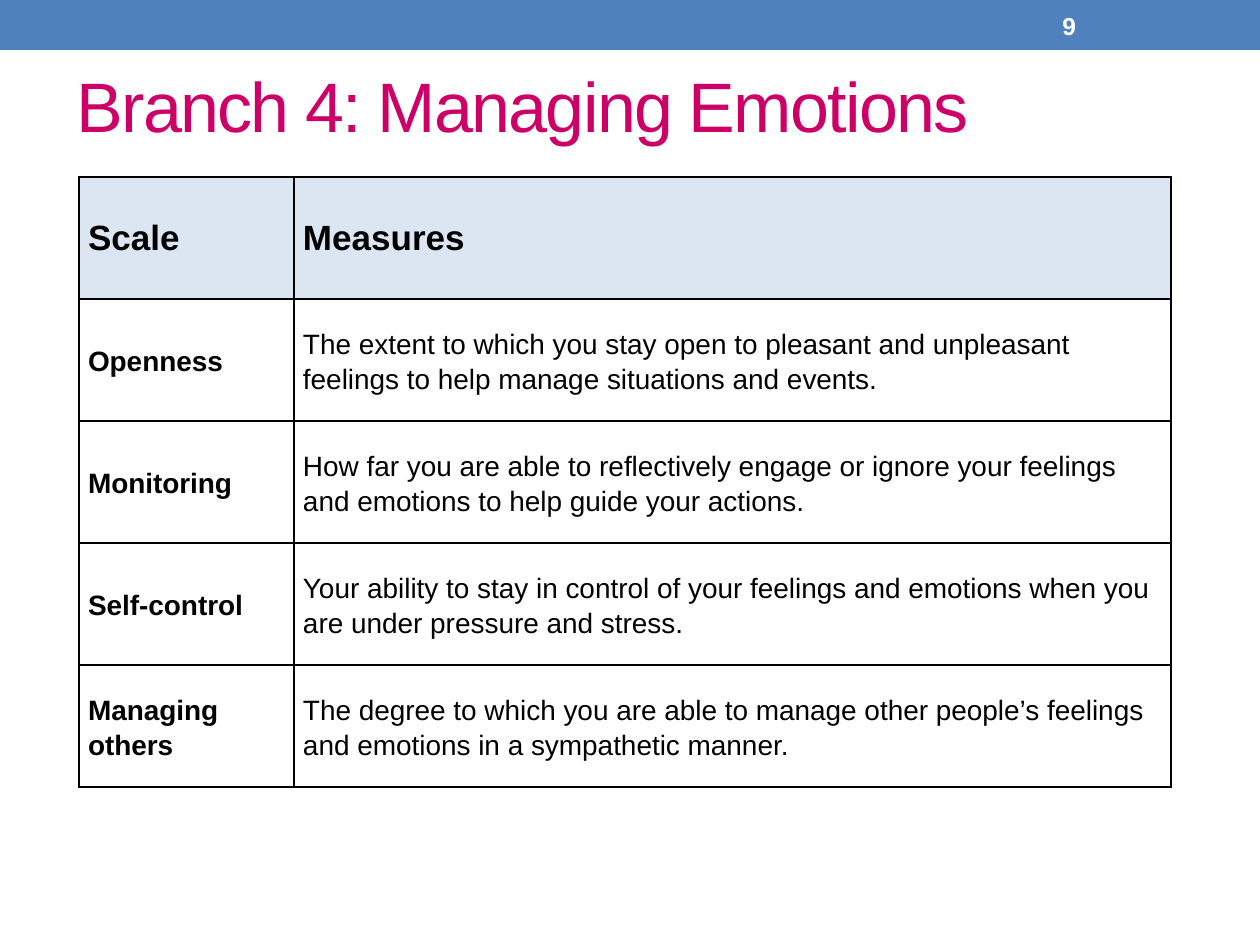
from lxml import etree
from pptx import Presentation
from pptx.dml.color import RGBColor
from pptx.enum.shapes import MSO_SHAPE
from pptx.enum.text import MSO_ANCHOR, PP_ALIGN
from pptx.oxml.ns import qn
from pptx.util import Pt

MIDDLE = MSO_ANCHOR.MIDDLE
LEFT = PP_ALIGN.LEFT
RECT = MSO_SHAPE.RECTANGLE

# Content
TITLE = "Branch 4: Managing Emotions"
NUMBER = "9"
ROWS = [
    ("Scale", "Measures"),
    ("Openness", "The extent to which you stay open to pleasant and unpleasant "
                 "feelings to help manage situations and events."),
    ("Monitoring", "How far you are able to reflectively engage or ignore your "
                   "feelings and emotions to help guide your actions."),
    ("Self-control", "Your ability to stay in control of your feelings and "
                     "emotions when you are under pressure and stress."),
    ("Managing others", "The degree to which you are able to manage other people’s "
                        "feelings and emotions in a sympathetic manner."),
]

# Layout in px, 126 to the inch
WIDTH, HEIGHT = 1260, 945
COLS = (215, 877)
ROW = 122


def px(n):
    return round(n * 914400 / 126)


def box(*nums):
    return [px(n) for n in nums]


def color(code):
    return RGBColor.from_string(code)


def paint(part, code):
    part.fill.solid()
    part.fill.fore_color.rgb = color(code)


def write(frame, text, size, code, bold=False):
    frame.text = text
    frame.word_wrap = True
    frame.vertical_anchor = MIDDLE
    para = frame.paragraphs[0]
    para.alignment = LEFT
    font = para.runs[0].font
    font.name, font.size, font.bold = "Arial", Pt(size), bold
    font.color.rgb = color(code)
    return para


def border(cell, code, width):
    props = cell._tc.get_or_add_tcPr()
    for spot, side in enumerate(("lnL", "lnR", "lnT", "lnB")):
        line = etree.Element(qn("a:" + side), w=str(Pt(width)))
        fill = etree.SubElement(line, qn("a:solidFill"))
        etree.SubElement(fill, qn("a:srgbClr"), val=code)
        props.insert(spot, line)


def main():
    prs = Presentation()
    prs.slide_width, prs.slide_height = box(WIDTH, HEIGHT)
    slide = prs.slides.add_slide(prs.slide_layouts[5])
    shapes = slide.shapes

    # Title
    title = shapes.title
    title.left, title.top, title.width, title.height = box(64, 26, 1134, 158)
    para = write(title.text_frame, TITLE, 40, "CC0066")
    para.runs[0].font._element.set("spc", "-100")

    # Top band and slide number
    band = shapes.add_shape(RECT, *box(0, 0, WIDTH, 50))
    band.shadow.inherit = False
    paint(band, "4F81BD")
    band.line.fill.background()
    label = shapes.add_textbox(*box(1050, 3, 147, 45))
    write(label.text_frame, NUMBER, 14, "FFFFFF", True)

    # Table of scales
    size = box(79, 177, sum(COLS), ROW * len(ROWS))
    table = shapes.add_table(len(ROWS), len(COLS), *size).table
    for col, width in zip(table.columns, COLS):
        col.width = px(width)
    for r, texts in enumerate(ROWS):
        head = r == 0
        table.rows[r].height = px(ROW)
        for c, text in enumerate(texts):
            cell = table.cell(r, c)
            para = write(cell.text_frame, text, 20 if head else 16,
                         "000000", head or c == 0)
            if not head:
                para.line_spacing = 1.15
            cell.vertical_anchor = MIDDLE
            cell.margin_left = cell.margin_right = px(9)
            cell.margin_top = cell.margin_bottom = 0
            paint(cell, "DCE6F2" if head else "FFFFFF")
            border(cell, "000000", 1)

    prs.save("out.pptx")


if __name__ == "__main__":
    main()
